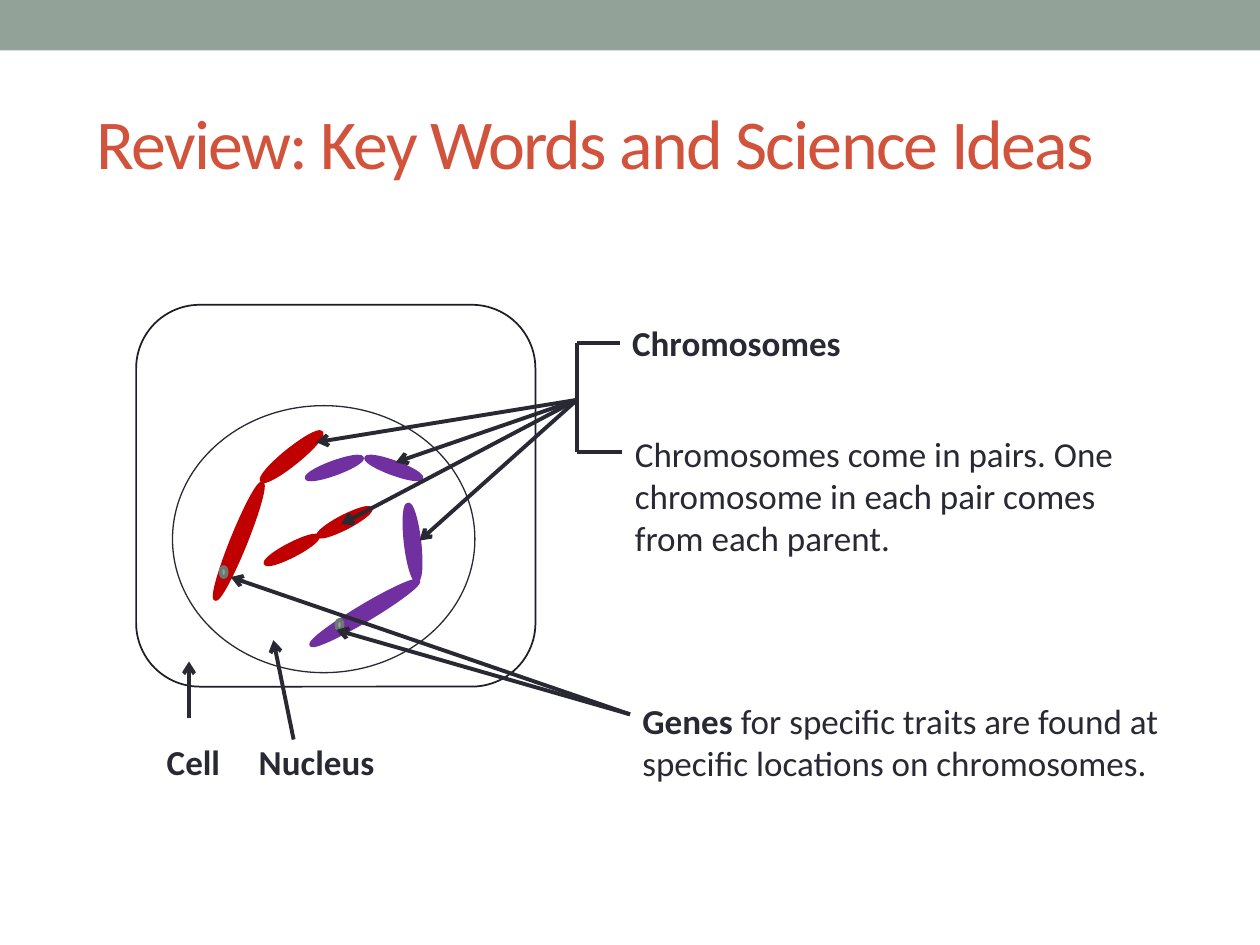
from dataclasses import dataclass

from lxml.etree import SubElement
from pptx import Presentation
from pptx.dml.color import RGBColor
from pptx.enum.shapes import MSO_CONNECTOR, MSO_SHAPE
from pptx.enum.text import MSO_ANCHOR
from pptx.oxml.ns import qn
from pptx.util import Pt

INK, RED, PURPLE = "292934", "C00000", "7030A0"
SAGE, GENE_EDGE, TITLE_RED = "93A299", "6D7871", "D2533C"


@dataclass
class Body:
    """A filled or outlined shape; lengths in points."""
    x: float
    y: float
    w: float
    h: float
    fill: str | None = None
    line: str | None = None
    weight: float = 2.08
    angle: float = 0
    kind: MSO_SHAPE = MSO_SHAPE.OVAL


@dataclass
class Label:
    """A text box whose runs are (text, bold) pairs."""
    x: float
    y: float
    w: float
    h: float
    runs: list[tuple[str, bool]]
    size: float = 20
    color: str = INK
    anchor: MSO_ANCHOR = MSO_ANCHOR.TOP
    spacing: float = 0


@dataclass
class Line:
    start: tuple[float, float]
    end: tuple[float, float]
    arrow: bool = True


def rgb(color: str) -> RGBColor:
    return RGBColor.from_string(color)


def draw_body(s, body: Body) -> None:
    sp = s.shapes.add_shape(body.kind, Pt(body.x), Pt(body.y), Pt(body.w), Pt(body.h))
    sp.shadow.inherit = False
    sp.rotation = body.angle
    if body.fill:
        sp.fill.solid()
        sp.fill.fore_color.rgb = rgb(body.fill)
    else:
        sp.fill.background()
    if body.line:
        sp.line.color.rgb = rgb(body.line)
        sp.line.width = Pt(body.weight)
    else:
        sp.line.fill.background()


def draw_label(s, label: Label) -> None:
    sp = s.shapes.add_textbox(Pt(label.x), Pt(label.y), Pt(label.w), Pt(label.h))
    tf = sp.text_frame
    tf.word_wrap = True
    tf.vertical_anchor = label.anchor
    p = tf.paragraphs[0]
    for text, bold in label.runs:
        r = p.add_run()
        r.text = text
        r.font.name = "Calibri"
        r.font.size = Pt(label.size)
        r.font.bold = bold
        r.font.color.rgb = rgb(label.color)
        if label.spacing:
            r.font._element.set("spc", str(int(label.spacing * 100)))


def draw_line(s, line: Line) -> None:
    ends = [Pt(v) for v in (*line.start, *line.end)]
    cn = s.shapes.add_connector(MSO_CONNECTOR.STRAIGHT, *ends)
    cn.line.color.rgb = rgb(INK)
    cn.line.width = Pt(2.25)
    if line.arrow:
        SubElement(cn.line._get_or_add_ln(), qn("a:tailEnd"), type="arrow")
    SubElement(cn._element.spPr, qn("a:effectLst"))


def arm(x: float, y: float, w: float, h: float, color: str, angle: float) -> Body:
    """One arm of a chromosome."""
    return Body(x, y, w, h, color, color, angle=angle)


def gene(x: float, y: float) -> Body:
    return Body(x, y, 3.6, 5.8, SAGE, GENE_EDGE)


BODIES = [
    # Header band
    Body(0, 0, 720, 28.8, SAGE, kind=MSO_SHAPE.RECTANGLE),
    # Cell and nucleus
    Body(77.8, 174.2, 228.2, 218.2, line="1E1E26", weight=1,
         kind=MSO_SHAPE.ROUNDED_RECTANGLE),
    Body(98.6, 231.8, 172.8, 152.6, line=INK, weight=0.75),
    # Long chromosome pair
    arm(100.8, 305.3, 71.3, 7.9, RED, 292),
    arm(144.7, 257, 43.9, 7.9, RED, 321.1),
    arm(172.8, 346.3, 71.3, 7.9, PURPLE, 329.2),
    arm(213.8, 306, 43.9, 7.9, PURPLE, 263.4),
    # Short chromosome pair
    arm(149.8, 311, 33.8, 6.5, RED, 332.6),
    arm(180, 295.2, 33.8, 6.5, RED, 332.6),
    arm(174.2, 264.2, 33.8, 6.5, PURPLE, 339.9),
    arm(208.1, 264.2, 33.8, 6.5, PURPLE, 20.1),
    # Genes
    gene(126, 324),
    gene(192.2, 354.2),
]

LABELS = [
    Label(48.2, 41.8, 635.8, 77.8, [("Review: Key Words and Science Ideas", False)],
          40, TITLE_RED, MSO_ANCHOR.MIDDLE, -1),
    Label(354.2, 180, 228.2, 31.7, [("Chromosomes", True)]),
    Label(88.2, 419.8, 50, 31.7, [("Cell", True)]),
    Label(140.8, 419.8, 100, 31.7, [("Nucleus", True)]),
    Label(355.7, 243.4, 310.3, 104.4,
          [("Chromosomes come in pairs. One chromosome in each pair comes "
            "from each parent.", False)]),
    Label(360, 396, 310.3, 55.4,
          [("Genes", True),
           (" for specific traits are found at specific locations on chromosomes.", False)]),
]

# Arrows fan out from the bracket to chromosomes and from the text to genes
HUB, GENE_TEXT = (329.8, 228.5), (360, 408.2)
CHROMOSOME_TIPS = [(226.1, 264.2), (180.7, 252.7), (195.1, 299.5), (239.8, 308.9)]
GENE_TIPS = [(192.2, 360), (131.8, 329.8)]
BRACKET = [(355.7, 258.5), (329.8, 258.5), (329.8, 195.8), (354.2, 195.8)]

LINES = [
    Line((108, 410.4), (108, 378)),
    Line((167.8, 422.6), (156.2, 365.8)),
    *(Line(GENE_TEXT, tip) for tip in GENE_TIPS),
    *(Line(HUB, tip) for tip in CHROMOSOME_TIPS),
    *(Line(a, b, arrow=False) for a, b in zip(BRACKET, BRACKET[1:])),
]


def main() -> None:
    prs = Presentation()
    prs.slide_width, prs.slide_height = Pt(720), Pt(540)
    s = prs.slides.add_slide(prs.slide_layouts[6])
    for body in BODIES:
        draw_body(s, body)
    for label in LABELS:
        draw_label(s, label)
    for line in LINES:
        draw_line(s, line)
    prs.save("out.pptx")


if __name__ == "__main__":
    main()
